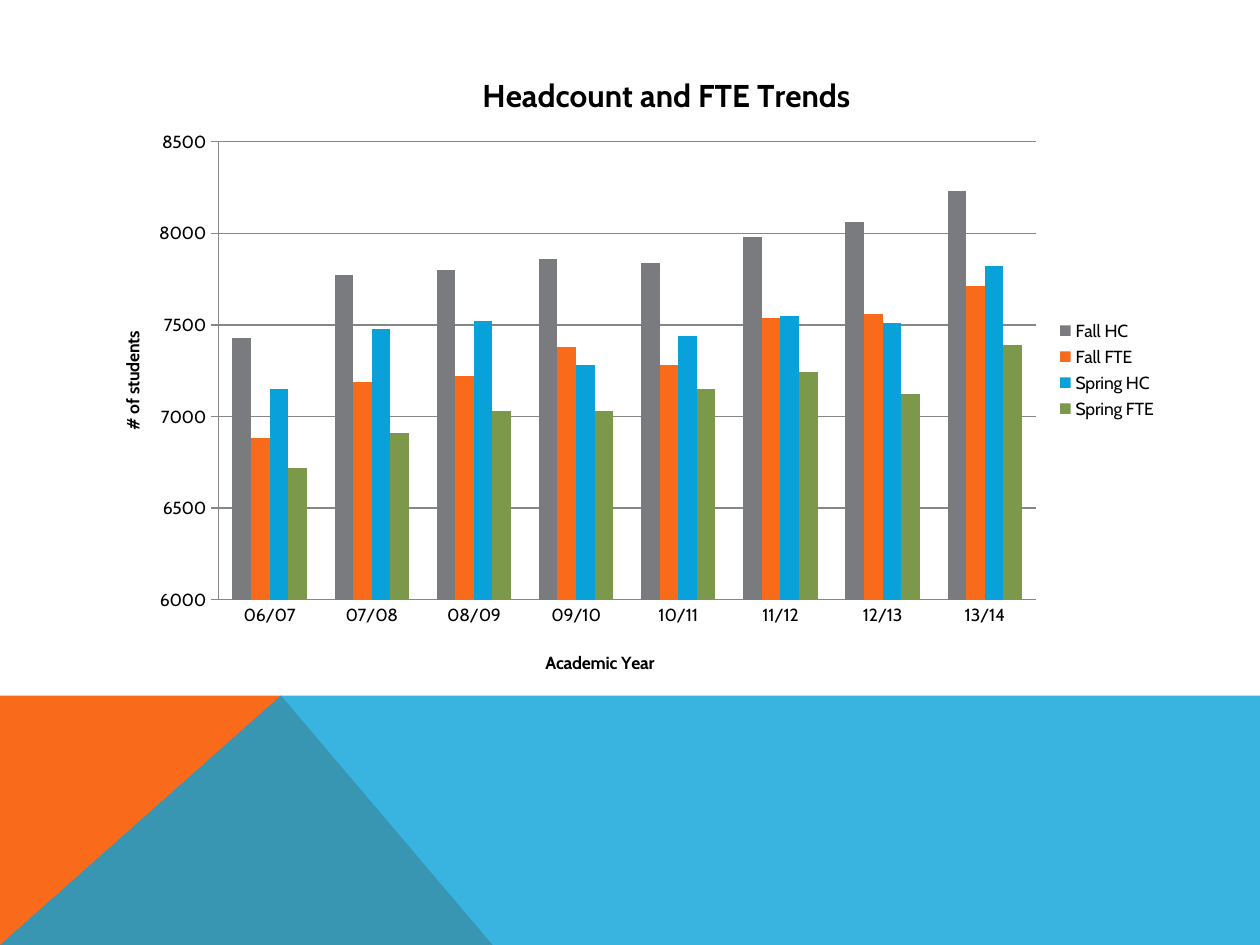
from lxml.etree import SubElement
from pptx import Presentation
from pptx.chart.data import CategoryChartData
from pptx.dml.color import RGBColor
from pptx.enum.chart import XL_CHART_TYPE, XL_LEGEND_POSITION, XL_TICK_MARK
from pptx.oxml import parse_xml
from pptx.oxml.ns import nsdecls, qn
from pptx.util import Inches, Pt


def color(format_object, value):
    if hasattr(format_object, "solid"):
        format_object.solid()
        format_object = format_object.fore_color
    format_object.rgb = RGBColor.from_string(value)


def write(title, text, size=10, bold=True, ink="000000"):
    paragraph = title.text_frame.paragraphs[0]
    run = paragraph.add_run()
    run.text = text
    run.font.name = "Cabin"
    run.font.size = Pt(size)
    run.font.bold = bold
    color(run.font.color, ink)


presentation = Presentation()
presentation.slide_width = Inches(10)
presentation.slide_height = Inches(7.5)
slide = presentation.slides.add_slide(presentation.slide_layouts[6])

band_top, peak = 5.52, 2.23
bands = [
    ("F96A1B", None, [(0, 7.5), (0, band_top), (peak, band_top), (3.91, 7.5)]),
    ("08A1D9", 80, [(0, 7.5), (peak, band_top), (10, band_top), (10, 7.5)]),
]
for fill, opacity, points in bands:
    corners = [(Inches(x), Inches(y)) for x, y in points]
    builder = slide.shapes.build_freeform(*corners[0])
    builder.add_line_segments(corners[1:], close=True)
    shape = builder.convert_to_shape()
    shape.shadow.inherit = False
    color(shape.fill, fill)
    shape.line.fill.background()
    if opacity:
        swatch = shape.fill._xPr.find(".//" + qn("a:srgbClr"))
        SubElement(swatch, qn("a:alpha"), val=str(opacity * 1000))

series_values = [
    ("Fall HC", "797B7E", (7430, 7770, 7800, 7860, 7840, 7980, 8060, 8230)),
    ("Fall FTE", "F96A1B", (6880, 7190, 7220, 7380, 7280, 7540, 7560, 7710)),
    ("Spring HC", "08A1D9", (7150, 7480, 7520, 7280, 7440, 7550, 7510, 7820)),
    ("Spring FTE", "7C984A", (6720, 6910, 7030, 7030, 7150, 7240, 7120, 7390)),
]
chart_data = CategoryChartData(number_format="0")
chart_data.categories = [f"{year:02}/{year + 1:02}" for year in range(6, 14)]
for name, fill, values in series_values:
    chart_data.add_series(name, values)

chart = slide.shapes.add_chart(
    XL_CHART_TYPE.COLUMN_CLUSTERED,
    Inches(0.67), Inches(0.33), Inches(8.65), Inches(5.17), chart_data,
).chart
chart.font.name = "Cabin"
chart.font.size = Pt(10)
color(chart.font.color, "000000")

plot = chart.plots[0]
plot.gap_width = 150
plot.overlap = 0
plot.vary_by_categories = False
for series, (name, fill, values) in zip(plot.series, series_values):
    color(series.format.fill, fill)
    series.invert_if_negative = False

years, students = chart.category_axis, chart.value_axis
years.major_tick_mark = XL_TICK_MARK.NONE
students.major_tick_mark = XL_TICK_MARK.OUTSIDE
students.minimum_scale = 6000
students.maximum_scale = 8500
students.major_unit = 500
students.has_major_gridlines = True
for line in (years.format.line, students.format.line, students.major_gridlines.format.line):
    color(line.fill, "868686")
    line.width = Pt(0.75)

chart.has_title = True
write(chart.chart_title, "Headcount and FTE Trends", size=18)
write(years.axis_title, "Academic Year")
write(students.axis_title, "# of students")
students.axis_title._element.find(".//" + qn("a:bodyPr")).set("rot", "-5400000")

chart.has_legend = True
chart.legend.position = XL_LEGEND_POSITION.RIGHT
chart.legend.include_in_layout = False

placements = [
    (chart.chart_title._element, {"x": 0.36, "y": 0.04}),
    (years.axis_title._element, {"x": 0.42, "y": 0.93}),
    (students.axis_title._element, {"x": 0.03, "y": 0.44}),
    (chart.legend._element, {"x": 0.89, "y": 0.42}),
    (chart._chartSpace.chart.plotArea, {"x": 0.123, "y": 0.154, "w": 0.75, "h": 0.703}),
]
for element, shares in placements:
    for old_layout in element.findall(qn("c:layout")):
        element.remove(old_layout)
    layout = parse_xml(f"<c:layout {nsdecls('c')}><c:manualLayout/></c:layout>")
    manual = layout[0]
    if "w" in shares:
        SubElement(manual, qn("c:layoutTarget"), val="inner")
    for side in ("x", "y"):
        SubElement(manual, qn(f"c:{side}Mode"), val="edge")
    for side, share in shares.items():
        SubElement(manual, qn(f"c:{side}"), val=str(share))
    overlay = element.find(qn("c:overlay"))
    if overlay is None:
        element.insert(0, layout)
    else:
        overlay.addprevious(layout)

presentation.save("out.pptx")
